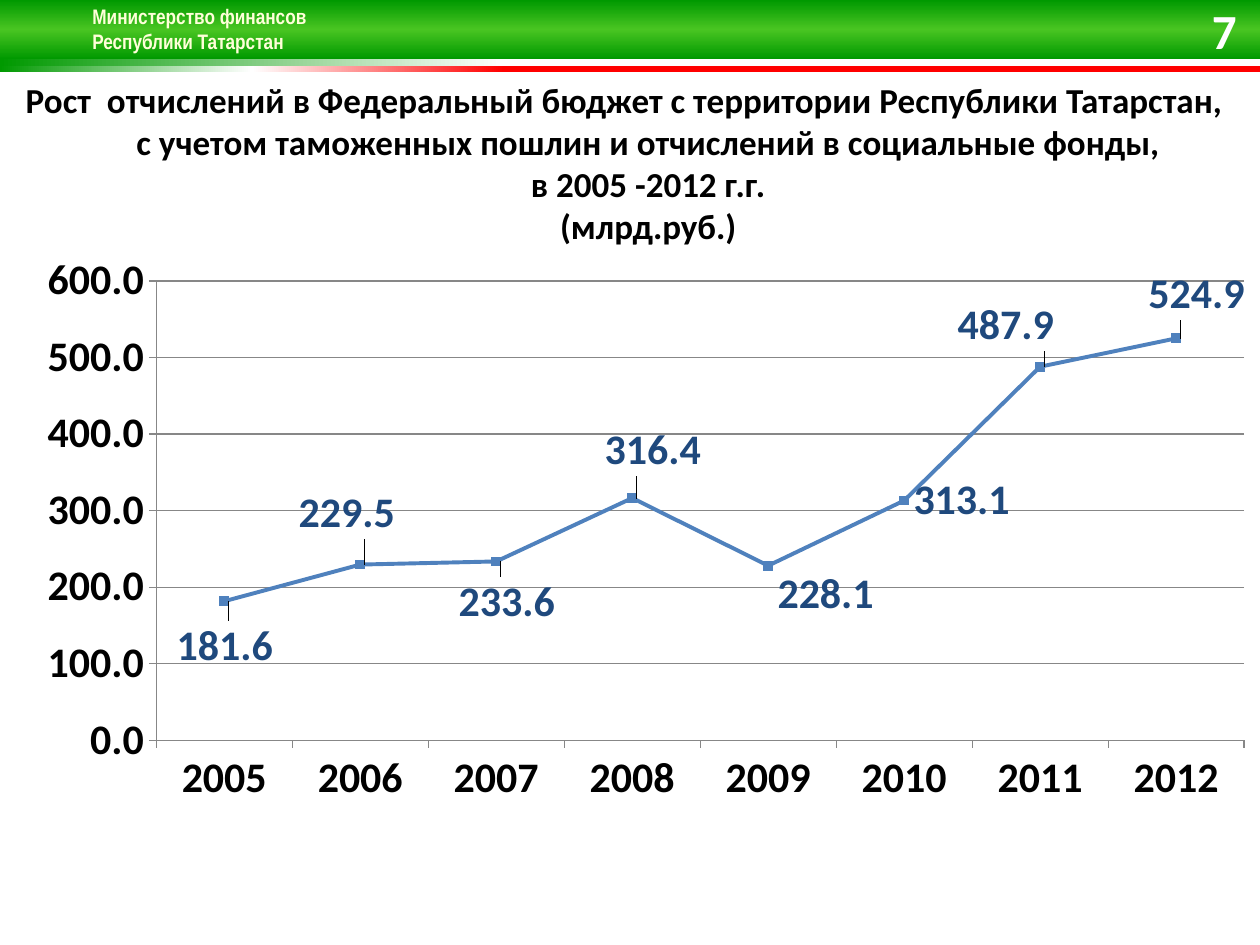
from lxml import etree
from pptx import Presentation, util as u
from pptx.chart.data import CategoryChartData
from pptx.dml.color import RGBColor
from pptx.enum import chart as ch, shapes, text
from pptx.oxml import parse_xml
from pptx.oxml.ns import nsdecls, qn

PX = 914400 / 126
WIDTH, HEIGHT = 1260, 945

GREEN = RGBColor(0x00, 0x99, 0x00)
LIME = RGBColor(0x49, 0xC5, 0x22)
RED = RGBColor(0xFF, 0x00, 0x00)
WHITE = RGBColor(0xFF, 0xFF, 0xFF)
CREAM = RGBColor(0xFF, 0xFF, 0xD9)
BLACK = RGBColor(0x00, 0x00, 0x00)
LINE_BLUE = RGBColor(0x4F, 0x81, 0xBD)
LABEL_BLUE = RGBColor(0x1F, 0x49, 0x7D)
GRID_GREY = RGBColor(0x87, 0x87, 0x87)

# Year, value, and how far (px) its label moves from the right of its point
REVENUE = [
    ("2005", 181.6, (-57, 45)),
    ("2006", 229.5, (-71, -51)),
    ("2007", 233.6, (-47, 41)),
    ("2008", 316.4, (-37, -47)),
    ("2009", 228.1, (0, 29)),
    ("2010", 313.1, None),
    ("2011", 487.9, (-92, -41)),
    ("2012", 524.9, (-37, -44)),
]


def px(n):
    return u.Emu(round(n * PX))


def box_emu(box):
    return [px(n) for n in box]


def set_font(font, name, size, color, bold=True):
    font.name, font.size, font.bold = name, u.Pt(size), bold
    font.color.rgb = color


def add_band(slide, box, stops, angle):
    """Add a borderless rectangle filled with a linear gradient."""
    sp = slide.shapes.add_shape(shapes.MSO_SHAPE.RECTANGLE, *box_emu(box))
    sp.shadow.inherit = False
    sp.line.fill.background()
    marks = "".join(
        f'<a:gs pos="{pos * 1000}"><a:srgbClr val="{color}"/></a:gs>' for pos, color in stops)
    grad = parse_xml(
        f'<a:gradFill {nsdecls("a")} rotWithShape="1"><a:gsLst>{marks}</a:gsLst>'
        f'<a:lin ang="{angle * 60000}" scaled="0"/></a:gradFill>')
    sp.element.spPr.find(qn("a:prstGeom")).addnext(grad)


def add_text(slide, box, content, font, align, anchor):
    tf = slide.shapes.add_textbox(*box_emu(box)).text_frame
    tf.word_wrap = True
    tf.vertical_anchor = anchor
    p = tf.paragraphs[0]
    p.text = content
    p.alignment = align
    set_font(p.font, *font)
    return p


def add_text_shadow(p):
    for r in p.runs:
        fill = r.font
        fill.color.rgb = CREAM
        r.font._element.find(qn("a:solidFill")).addnext(parse_xml(
            f'<a:effectLst {nsdecls("a")}><a:outerShdw blurRad="38100" dist="38100" '
            'dir="2700000" algn="tl"><a:srgbClr val="000000"/></a:outerShdw></a:effectLst>'))


def header(slide, box):
    x, y, w, h = box
    add_band(slide, (x, y + h, w, 7), [(0, WHITE), (60, WHITE), (100, GREEN)], 180)
    add_band(slide, (x, y + h + 7, w, 6), [(60, RED), (80, WHITE), (100, GREEN)], 180)
    add_band(slide, box, [(0, GREEN), (50, LIME), (100, GREEN)], 90)
    ministry = add_text(slide, (x + 80, y - 3, 242, 62),
                        "Министерство финансов\vРеспублики Татарстан",
                        ("Arial Narrow", 12, CREAM),
                        text.PP_ALIGN.LEFT, text.MSO_ANCHOR.TOP)
    add_text_shadow(ministry)
    add_text(slide, (x + w - 92, y + 8, 81, 43), "7", ("Calibri", 28, WHITE),
             text.PP_ALIGN.RIGHT, text.MSO_ANCHOR.MIDDLE)


def title(slide, box):
    sp = slide.shapes.title
    sp.left, sp.top, sp.width, sp.height = box_emu(box)
    tf = sp.text_frame
    tf.word_wrap = True
    tf.auto_size = text.MSO_AUTO_SIZE.NONE
    tf.vertical_anchor = text.MSO_ANCHOR.TOP
    tf.margin_right = px(24)
    p = tf.paragraphs[0]
    p.text = ("Рост  отчислений в Федеральный бюджет с территории Республики Татарстан,\v"
              "с учетом таможенных пошлин и отчислений в социальные фонды,\v"
              "в 2005 -2012 г.г.\v(млрд.руб.)")
    p.alignment = text.PP_ALIGN.CENTER
    pPr = p._p.get_or_add_pPr()
    pPr.set("marL", str(px(48)))
    pPr.set("indent", str(-px(48)))
    set_font(p.font, "Calibri", 20, BLACK)


def manual_layout(x, y, **extra):
    """Make a c:layout from chart fractions; extra entries keep schema order."""
    layout = etree.Element(qn("c:layout"))
    manual = etree.SubElement(layout, qn("c:manualLayout"))
    for tag, val in {**extra.pop("modes", {}), "x": x, "y": y, **extra}.items():
        etree.SubElement(manual, qn(f"c:{tag}")).set("val", str(val))
    return layout


def format_axis(axis):
    set_font(axis.tick_labels.font, "Calibri", 24, BLACK)
    axis.major_tick_mark = ch.XL_TICK_MARK.OUTSIDE
    axis.minor_tick_mark = ch.XL_TICK_MARK.NONE
    axis.format.line.color.rgb = GRID_GREY


def label_points(chart, series, box):
    labels = series.data_labels
    labels.show_value = True
    labels.number_format, labels.number_format_is_linked = "0.0", False
    labels.position = ch.XL_LABEL_POSITION.RIGHT
    set_font(labels.font, "Calibri", 24, LABEL_BLUE)
    for i, (_, _, shift) in enumerate(REVENUE):
        if shift is None:
            continue
        label = series.points[i].data_label
        label.position = ch.XL_LABEL_POSITION.RIGHT
        set_font(label.font, "Calibri", 24, LABEL_BLUE)
        idx = chart.element.xpath(f'.//c:dLbl/c:idx[@val="{i}"]')[0]
        idx.addnext(manual_layout(round(shift[0] / box[2], 4), round(shift[1] / box[3], 4)))


def revenue_chart(slide, box):
    data = CategoryChartData(number_format="0.0")
    data.categories = [year for year, _, _ in REVENUE]
    data.add_series("Series 1", [value for _, value, _ in REVENUE])
    chart = slide.shapes.add_chart(
        ch.XL_CHART_TYPE.LINE_MARKERS, *box_emu(box), data).chart
    chart.has_title = False
    chart.has_legend = False
    set_font(chart.font, "Calibri", 18, BLACK, bold=False)

    plot_area = chart.element.xpath(".//c:plotArea")[0]
    for old in plot_area.findall(qn("c:layout")):
        plot_area.remove(old)
    plot_area.insert(0, manual_layout(
        0.115, 0.039, w=0.885, h=0.691,
        modes={"layoutTarget": "inner", "xMode": "edge", "yMode": "edge"}))

    format_axis(chart.category_axis)
    axis = chart.value_axis
    format_axis(axis)
    axis.minimum_scale, axis.maximum_scale, axis.major_unit = 0, 600, 100
    axis.tick_labels.number_format = "0.0"
    axis.tick_labels.number_format_is_linked = False
    axis.major_gridlines.format.line.color.rgb = GRID_GREY

    plot = chart.plots[0]
    plot.vary_by_categories = False
    series = plot.series[0]
    series.smooth = False
    series.format.line.color.rgb = LINE_BLUE
    series.format.line.width = u.Pt(2.25)
    series.marker.style = ch.XL_MARKER_STYLE.SQUARE
    series.marker.size = 5
    series.marker.format.fill.solid()
    series.marker.format.fill.fore_color.rgb = LINE_BLUE
    series.marker.format.line.color.rgb = LINE_BLUE
    label_points(chart, series, box)


def main():
    prs = Presentation()
    prs.slide_width, prs.slide_height = px(WIDTH), px(HEIGHT)
    slide = prs.slides.add_slide(prs.slide_layouts[5])
    header(slide, (0, 0, WIDTH, 59))
    title(slide, (0, 72, WIDTH, 195))
    revenue_chart(slide, (15, 255, 1230, 665))
    prs.save("out.pptx")


if __name__ == "__main__":
    main()
